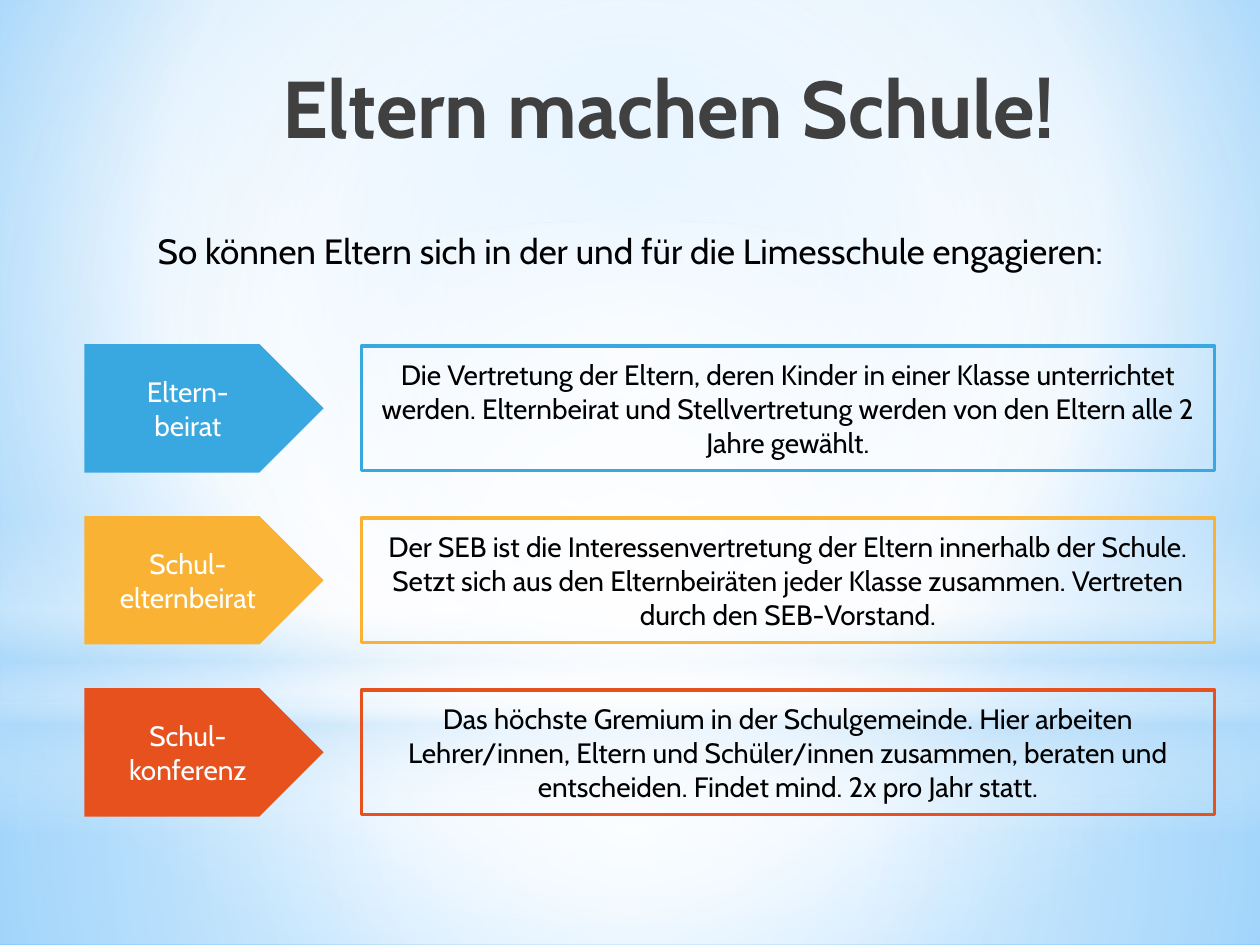
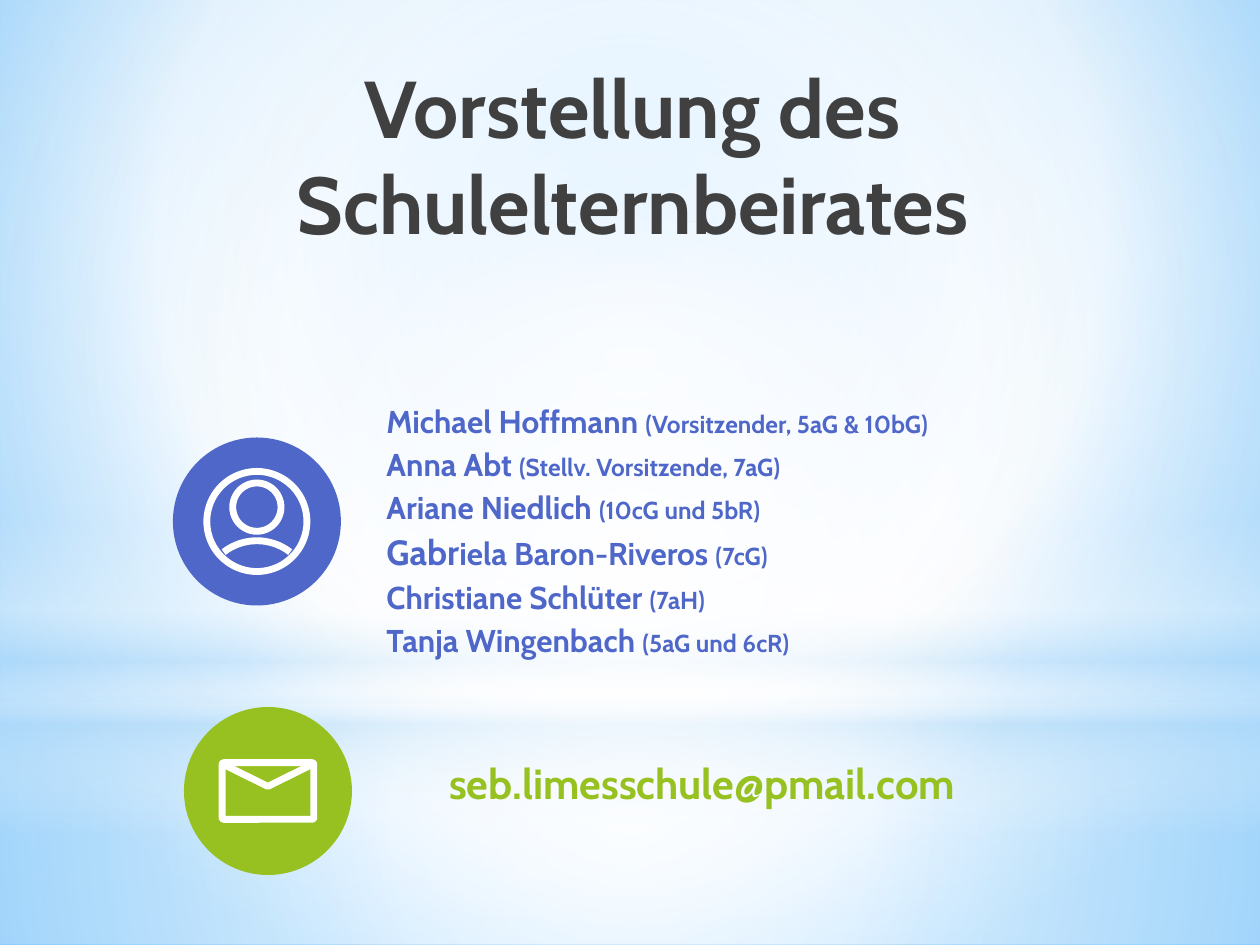
from dataclasses import dataclass
from math import asin, cos, sin

from lxml import etree
from pptx import Presentation
from pptx.dml.color import RGBColor
from pptx.enum import shapes, text
from pptx.oxml import ns
from pptx.util import Pt

KIND = shapes.MSO_SHAPE
CENTER, LEFT = text.PP_ALIGN.CENTER, text.PP_ALIGN.LEFT
TOP, MIDDLE = text.MSO_ANCHOR.TOP, text.MSO_ANCHOR.MIDDLE


@dataclass(frozen=True)
class Theme:
    font: str = "Cabin"
    heading: str = "404040"
    ink: str = "000000"
    white: str = "FFFFFF"
    sky: str = "B4DCFA"
    sky_inner: str = "9ED5FF"
    sky_outer: str = "5BB9FF"
    blue: str = "39A7E0"
    amber: str = "F9B233"
    orange: str = "E7511E"
    indigo: str = "4E67C8"
    green: str = "96C121"
    title_size: float = 46
    email_size: float = 24
    intro_size: float = 20
    name_size: float = 18
    body_size: float = 16
    role_size: float = 14
    frame_line: float = 2
    icon_line: float = 3.9


THEME = Theme()
WIDTH, HEIGHT = 720, 540
MIDPOINT = (50, 50, 50, 50)

SKY = [(0, THEME.sky_inner, 100), (60, THEME.white, 100), (100, THEME.sky_outer, 100)]
# Kind, box, gradient stops (position, colour, opacity), focus; no focus means top to bottom
GLOWS = [
    (KIND.RECTANGLE, (0, 402, WIDTH, 138),
     [(0, THEME.white, 91), (37, THEME.white, 76), (100, THEME.sky, 79)], MIDPOINT),
    (KIND.RECTANGLE, (0, 0, WIDTH, 402),
     [(0, THEME.white, 89), (48, THEME.white, 62), (100, THEME.sky, 79)], MIDPOINT),
    (KIND.RECTANGLE, (0, 296.6, WIDTH, 180),
     [(0, THEME.white, 0), (29, THEME.white, 30), (45, THEME.sky, 40),
      (55, THEME.white, 26), (65, THEME.sky, 60), (100, THEME.white, 0)], None),
    (KIND.OVAL, (0, 126, WIDTH, 402), [(0, THEME.white, 100), (56, THEME.white, 0)], MIDPOINT),
]

BODIES = [
    ("Eltern-\nbeirat", THEME.blue,
     "Die Vertretung der Eltern, deren Kinder in einer Klasse unterrichtet werden. "
     "Elternbeirat und Stellvertretung werden von den Eltern alle 2 Jahre gewählt."),
    ("Schul-\nelternbeirat", THEME.amber,
     "Der SEB ist die Interessenvertretung der Eltern innerhalb der Schule. Setzt sich aus "
     "den Elternbeiräten jeder Klasse zusammen. Vertreten durch den SEB-Vorstand."),
    ("Schul-\nkonferenz", THEME.orange,
     "Das höchste Gremium in der Schulgemeinde. Hier arbeiten Lehrer/innen, Eltern und "
     "Schüler/innen zusammen, beraten und entscheiden. Findet mind. 2x pro Jahr statt."),
]

# Runs of name and role; a run with no size of its own takes the name size
MEMBERS = [
    [("Michael Hoffmann ", THEME.name_size), ("(Vorsitzender, 5aG & 10bG)", THEME.role_size)],
    [("Anna Abt ", THEME.name_size), ("(Stellv. Vorsitzende, 7aG)", THEME.role_size)],
    [("Ariane Niedlich ", THEME.name_size), ("(10cG und 5bR)", THEME.role_size)],
    [("Gabr", THEME.intro_size), ("iela Baron-Riveros ", THEME.name_size),
     ("(7cG)", THEME.role_size)],
    [("Christiane Schlüter ", THEME.name_size), ("(7aH)", THEME.role_size)],
    [("Tanja Wingenbach ", THEME.name_size), ("(5aG und 6cR)", THEME.role_size)],
]


def rgb(color):
    return RGBColor.from_string(color)


def set_gradient(fill, properties, stops, focus):
    """Fill with a gradient: circular around focus, or top to bottom without one."""
    fill.solid()
    solid = properties.find(ns.qn("a:solidFill"))
    gradient = etree.Element(ns.qn("a:gradFill"), rotWithShape="1")
    stop_list = etree.SubElement(gradient, ns.qn("a:gsLst"))
    for position, color, opacity in stops:
        stop = etree.SubElement(stop_list, ns.qn("a:gs"), pos=str(position * 1000))
        tint = etree.SubElement(stop, ns.qn("a:srgbClr"), val=color)
        if opacity < 100:
            etree.SubElement(tint, ns.qn("a:alpha"), val=str(opacity * 1000))
    if focus:
        circle = etree.SubElement(gradient, ns.qn("a:path"), path="circle")
        sides = {side: str(share * 1000) for side, share in zip("ltrb", focus)}
        etree.SubElement(circle, ns.qn("a:fillToRect"), sides)
    else:
        etree.SubElement(gradient, ns.qn("a:lin"), ang="5400000", scaled="0")
    properties.replace(solid, gradient)


def style(shape, fill=None, line=None, width=0):
    shape.shadow.inherit = False
    if fill:
        shape.fill.solid()
        shape.fill.fore_color.rgb = rgb(fill)
    else:
        shape.fill.background()
    if line:
        shape.line.color.rgb = rgb(line)
        shape.line.width = Pt(width)
    else:
        shape.line.fill.background()
    return shape


def add_shape(slide, kind, box, **look):
    return style(slide.shapes.add_shape(kind, *map(Pt, box)), **look)


def add_disc(slide, x, y, radius, **look):
    """Circle around the point x, y."""
    return add_shape(slide, KIND.OVAL, (x - radius, y - radius, 2 * radius, 2 * radius), **look)


def add_stroke(slide, points):
    """Open white icon line through the points."""
    (x, y), *rest = [tuple(map(Pt, point)) for point in points]
    builder = slide.shapes.build_freeform(x, y)
    builder.add_line_segments(rest, close=False)
    style(builder.convert_to_shape(), line=THEME.white, width=THEME.icon_line)


def write(shape, paragraphs, color, bold=False, align=CENTER, anchor=MIDDLE, after=0):
    """Set paragraphs, each a list of (words, size) runs."""
    frame = shape.text_frame
    frame.word_wrap = True
    frame.vertical_anchor = anchor
    for index, runs in enumerate(paragraphs):
        paragraph = frame.add_paragraph() if index else frame.paragraphs[0]
        paragraph.alignment = align
        paragraph.space_after = Pt(after)
        for words, size in runs:
            for number, line in enumerate(words.split("\n")):
                if number:
                    paragraph.add_line_break()
                run = paragraph.add_run()
                run.text = line
                looks = {"name": THEME.font, "size": Pt(size), "bold": bold}
                for attribute, value in looks.items():
                    setattr(run.font, attribute, value)
                run.font.color.rgb = rgb(color)


def add_text(slide, box, paragraphs, color, **look):
    write(slide.shapes.add_textbox(*map(Pt, box)), paragraphs, color, anchor=TOP, **look)


def new_slide(deck, title, left, width):
    """Slide with the glowing sky and a title."""
    slide = deck.slides.add_slide(deck.slide_layouts[6])
    for kind, box, stops, focus in GLOWS:
        glow = add_shape(slide, kind, box)
        set_gradient(glow.fill, glow.element.spPr, stops, focus)
    add_text(slide, (left, 29.5, width, 90), [[(title, THEME.title_size)]],
             THEME.heading, bold=True)
    return slide


def add_body_row(slide, top, label, color, duty):
    height, frame_height = 73.4, 71.3
    tag = add_shape(slide, KIND.PENTAGON, (48.2, top, 136.8, height), fill=color)
    write(tag, [[(label, THEME.body_size)]], THEME.white)
    frame_box = (206.6, top + (height - frame_height) / 2, 487.4, frame_height)
    frame = add_shape(slide, KIND.RECTANGLE, frame_box, line=color, width=THEME.frame_line)
    write(frame, [[(duty, THEME.body_size)]], THEME.ink)


def add_person_icon(slide, x, y):
    outline = {"line": THEME.white, "width": THEME.icon_line}
    add_disc(slide, x, y, 48, fill=THEME.indigo)
    add_disc(slide, x, y, 28.6, **outline)
    add_disc(slide, x, y - 8.2, 13.8, **outline)
    bend, half_width, steps = 31, 19, 16
    reach = asin(half_width / bend)
    angles = [reach * (2 * step / steps - 1) for step in range(steps + 1)]
    add_stroke(slide, [(x + bend * sin(a), y + 11 + bend * (1 - cos(a))) for a in angles])


def add_mail_icon(slide, x, y):
    add_disc(slide, x, y, 48, fill=THEME.green)
    width, height = 52.4, 32.4
    envelope = add_shape(slide, KIND.ROUNDED_RECTANGLE,
                         (x - width / 2, y - height / 2, width, height),
                         line=THEME.white, width=THEME.icon_line)
    envelope.adjustments[0] = 0.03
    add_stroke(slide, [(x - 25, y - 15), (x, y - 2.6), (x + 25, y - 15)])


def add_engagement_slide(deck):
    slide = new_slide(deck, "Eltern machen Schule!", 103.7, 556.6)
    first_top, pitch = 196.6, 98.3
    for row, body in enumerate(BODIES):
        add_body_row(slide, first_top + row * pitch, *body)
    intro = "So können Eltern sich in der und für die Limesschule engagieren:"
    add_text(slide, (11.5, 127.4, 697.7, 31.7), [[(intro, THEME.intro_size)]],
             THEME.ink, after=6)


def add_council_slide(deck):
    slide = new_slide(deck, "Vorstellung des Schulelternbeirates", 105.1, 512.6)
    add_person_icon(slide, 146.8, 298)
    add_text(slide, (213.8, 226, 378.7, 155.5), MEMBERS, THEME.indigo,
             bold=True, align=LEFT, after=3)
    add_mail_icon(slide, 153.1, 452)
    add_text(slide, (196, 429.1, 410.4, 36), [[("seb.limesschule@pmail.com", THEME.email_size)]],
             THEME.green, bold=True)


def main():
    deck = Presentation()
    deck.slide_width, deck.slide_height = Pt(WIDTH), Pt(HEIGHT)
    master = deck.slide_master
    sky_fill = master.background.fill
    sky_fill.solid()
    set_gradient(sky_fill, master.element.find(".//" + ns.qn("p:bgPr")), SKY, (20, 10, 20, 60))
    add_engagement_slide(deck)
    add_council_slide(deck)
    deck.save("out.pptx")


if __name__ == "__main__":
    main()
